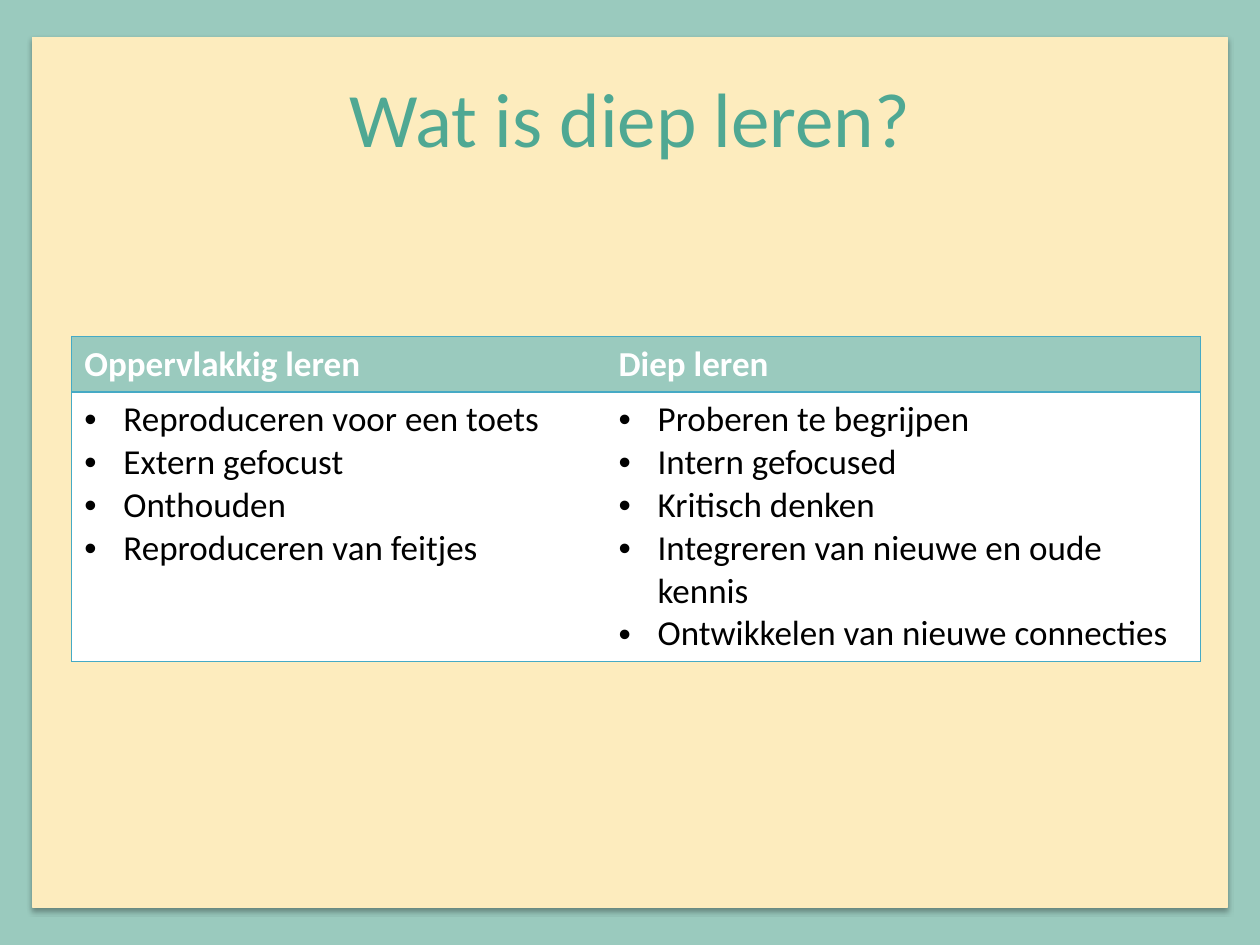
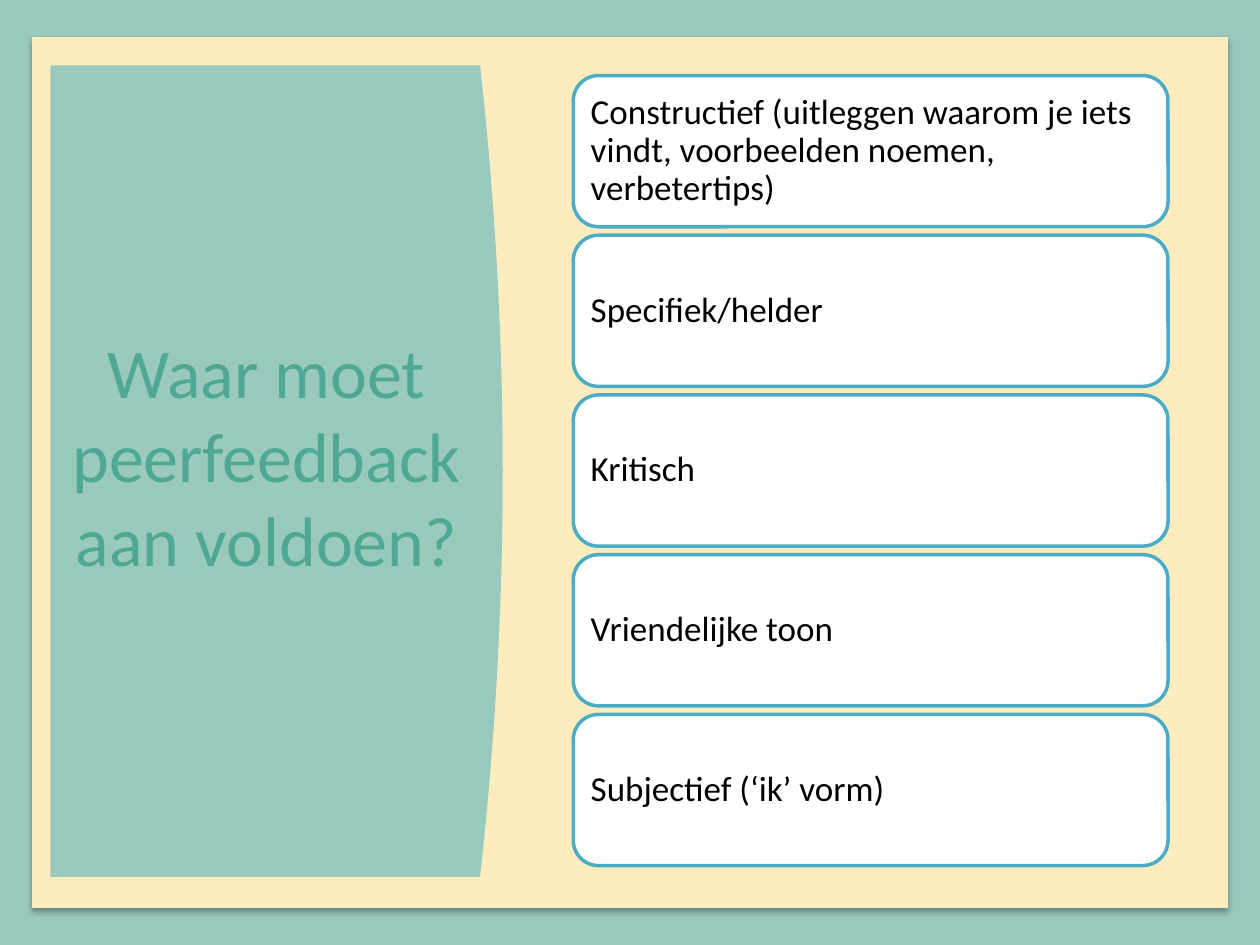
import pptx
import pptx.chart.data
import pptx.dml.color
import pptx.enum.shapes
import pptx.enum.text
import pptx.oxml
import pptx.oxml.ns
import pptx.util

Inches = pptx.util.Inches
Pt = pptx.util.Pt
ALIGN = pptx.enum.text.PP_ALIGN
MIDDLE = pptx.enum.text.MSO_ANCHOR.MIDDLE
SHAPES = pptx.enum.shapes.MSO_SHAPE

FONT = "Calibri"
COLORS = {
    "mint": "9ACABE",
    "cream": "FDECBE",
    "title": "4FA893",
    "table line": "46AAC5",
    "card line": "4BACC6",
    "white": "FFFFFF",
    "black": "000000",
}
NO_GRID_STYLE = "{2D5ABB26-0587-4C30-8999-92F81FD0307C}"

TABLE_COLUMNS = [
    ("Oppervlakkig leren", 4.24, [
        "Reproduceren voor een toets",
        "Extern gefocust",
        "Onthouden",
        "Reproduceren van feitjes",
    ]),
    ("Diep leren", 4.72, [
        "Proberen te begrijpen",
        "Intern gefocused",
        "Kritisch denken",
        "Integreren van nieuwe en oude kennis",
        "Ontwikkelen van nieuwe connecties",
    ]),
]
FEEDBACK_RULES = [
    "Constructief (uitleggen waarom je iets vindt, voorbeelden noemen, verbetertips)",
    "Specifiek/helder",
    "Kritisch",
    "Vriendelijke toon",
    "Subjectief (‘ik’ vorm)",
]


def rgb(name):
    return pptx.dml.color.RGBColor.from_string(COLORS[name])


def xml(text):
    """Parse a fragment of DrawingML."""
    namespace = pptx.oxml.ns.nsdecls("a")
    return pptx.oxml.parse_xml(text.replace(">", f" {namespace}>", 1))


def paint(item, fill):
    item.fill.solid()
    item.fill.fore_color.rgb = rgb(fill)


def write(frame, text, size=20, color="black", bold=False,
          align=ALIGN.LEFT, spacing=None, bullets=False):
    """Fill a text frame; each line of text becomes a paragraph."""
    frame.word_wrap = True
    for index, line in enumerate(text.split("\n")):
        para = frame.paragraphs[0] if index == 0 else frame.add_paragraph()
        para.alignment = align
        if spacing:
            para.line_spacing = spacing
        if bullets:
            add_bullet(para)
        span = para.add_run()
        span.text = line
        span.font.name = FONT
        span.font.size = Pt(size)
        span.font.bold = bold
        span.font.color.rgb = rgb(color)


def add_bullet(para, indent=0.31):
    properties = para._p.get_or_add_pPr()
    properties.set("marL", str(Inches(indent)))
    properties.set("indent", str(Inches(-indent)))
    properties.append(xml('<a:buFont typeface="Arial"></a:buFont>'))
    properties.append(xml('<a:buChar char="•"></a:buChar>'))


def add_box(page, kind, left, top, width, height, fill, line, line_width):
    box = page.shapes.add_shape(
        kind, Inches(left), Inches(top), Inches(width), Inches(height))
    box.shadow.inherit = False
    paint(box, fill)
    box.line.color.rgb = rgb(line)
    box.line.width = Pt(line_width)
    return box


def add_page(deck):
    """Add a mint page with the cream panel and its soft shadow."""
    page = deck.slides.add_slide(deck.slide_layouts[5])
    paint(page.background, "mint")
    panel = add_box(page, SHAPES.RECTANGLE, 0.26, 0.3, 9.48, 6.9,
                    "cream", "cream", 0.75)
    effects = panel.element.spPr.find(pptx.oxml.ns.qn("a:effectLst"))
    effects.append(xml(
        f'<a:outerShdw blurRad="{Pt(3.1)}" dist="{Pt(1.8)}" dir="5400000" rotWithShape="0">'
        f'<a:srgbClr val="{COLORS["black"]}"><a:alpha val="35000"/></a:srgbClr>'
        '</a:outerShdw>'))
    return page


def set_title(page, text, left, top, width, height, size):
    title = page.shapes.title
    title.left, title.top = Inches(left), Inches(top)
    title.width, title.height = Inches(width), Inches(height)
    title.text_frame.vertical_anchor = MIDDLE
    write(title.text_frame, text, size=size, color="title", align=ALIGN.CENTER)
    # Bring the title in front of the panel
    title.element.getparent().append(title.element)


def set_borders(cell, sides):
    """Draw borders on the given sides, listed in the order L, R, T, B."""
    properties = cell._tc.get_or_add_tcPr()
    for index, side in enumerate(sides):
        properties.insert(index, xml(
            f'<a:ln{side} w="{Pt(0.75)}"><a:solidFill>'
            f'<a:srgbClr val="{COLORS["table line"]}"/></a:solidFill></a:ln{side}>'))


def add_comparison(page, left, top, header_height, body_height):
    width = sum(column[1] for column in TABLE_COLUMNS)
    holder = page.shapes.add_table(
        2, len(TABLE_COLUMNS), Inches(left), Inches(top),
        Inches(width), Inches(header_height + body_height))
    next(holder.element.iter(pptx.oxml.ns.qn("a:tableStyleId"))).text = NO_GRID_STYLE
    table = holder.table
    table.rows[0].height = Inches(header_height)
    table.rows[1].height = Inches(body_height)
    for index, (heading, column_width, points) in enumerate(TABLE_COLUMNS):
        table.columns[index].width = Inches(column_width)
        header, body = table.cell(0, index), table.cell(1, index)
        paint(header, "mint")
        paint(body, "white")
        write(header.text_frame, heading, color="white", bold=True)
        write(body.text_frame, "\n".join(points), bullets=True)
        outer_side = "L" if index == 0 else "R"
        for cell in (header, body):
            set_borders(cell, [outer_side, "T", "B"])


def add_cards(page, texts, left, first_top, last_top, width, height):
    step = (last_top - first_top) / (len(texts) - 1)
    for index, text in enumerate(texts):
        card = add_box(page, SHAPES.ROUNDED_RECTANGLE, left, first_top + index * step,
                       width, height, "white", "card line", 2)
        frame = card.text_frame
        frame.margin_left = frame.margin_right = Inches(0.08)
        frame.margin_top = frame.margin_bottom = Inches(0.08)
        frame.vertical_anchor = MIDDLE
        write(frame, text, spacing=0.9)


def add_curved_panel(page, left, top, right, bottom, bulge, steps=40):
    """Draw a panel whose right edge bulges along a parabola."""
    edge = []
    for step in range(steps + 1):
        share = step / steps
        x = right + bulge * 4 * share * (1 - share)
        edge.append((Inches(x), Inches(top + (bottom - top) * share)))
    builder = page.shapes.build_freeform(Inches(left), Inches(top))
    builder.add_line_segments(edge + [(Inches(left), Inches(bottom))], close=True)
    panel = builder.convert_to_shape()
    panel.shadow.inherit = False
    paint(panel, "mint")
    panel.line.fill.background()


def main():
    deck = pptx.Presentation()
    deck.slide_width, deck.slide_height = Inches(10), Inches(7.5)

    # Surface learning against deep learning
    page = add_page(deck)
    set_title(page, "Wat is diep leren?", 0.5, 0.3, 9, 1.25, size=44)
    add_comparison(page, 0.57, 2.67, header_height=0.41, body_height=2.12)

    # Requirements for peer feedback
    page = add_page(deck)
    add_cards(page, FEEDBACK_RULES, 4.55, 0.6, 5.67, 4.72, 1.2)
    add_curved_panel(page, 0.4, 0.52, 3.81, 6.96, bulge=0.18)
    set_title(page, "Waar moet peerfeedback aan voldoen?", 0.43, 1.21, 3.37, 4.8, size=40)

    deck.save("out.pptx")


if __name__ == "__main__":
    main()
